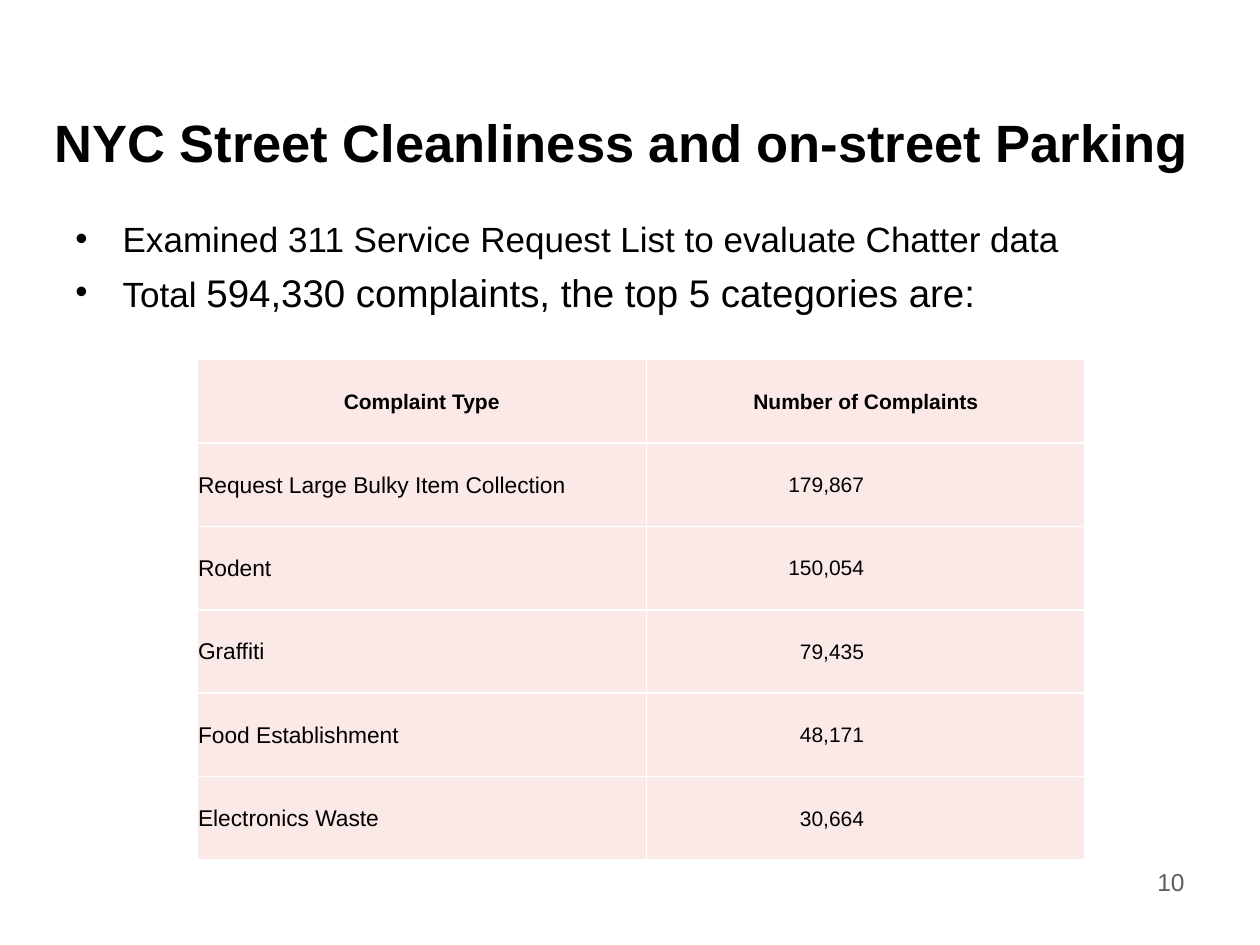
"""Build the street cleanliness slide with its complaints table."""
from lxml.etree import SubElement
from pptx import Presentation
from pptx.dml.color import RGBColor
from pptx.enum.text import MSO_ANCHOR, PP_ALIGN
from pptx.oxml.ns import qn
from pptx.util import Pt

COLORS = {"text": "000000", "page": "5F5F5F", "cell": "FBE9E8", "line": "FFFFFF"}
TITLE = "NYC Street Cleanliness and on-street Parking"
POINTS = [
    [("Examined 311 Service Request List to evaluate Chatter data", 20)],
    [("Total ", 20), ("594,330 complaints, the top 5 categories are:", 22)],
]
HEAD = ("Complaint Type", "Number of Complaints")
ROWS = [
    ("Request Large Bulky Item Collection", "179,867"),
    ("Rodent", "150,054"),
    ("Graffiti", "79,435"),
    ("Food Establishment", "48,171"),
    ("Electronics Waste", "30,664"),
]
PAGE = "10"
WIDTHS = (257, 250.6)
ROW_H = 47.7
SIZES = (13, 12)
ALIGNS = (PP_ALIGN.LEFT, PP_ALIGN.RIGHT)
INSETS = (0.7, 126.3)


def color(name):
    return RGBColor.from_string(COLORS[name])


def write(para, text, size=12, bold=False, tone="text", align=PP_ALIGN.LEFT):
    para.alignment = align
    run = para.add_run()
    run.text = text
    font = run.font
    font.name, font.size, font.bold = "Arial", Pt(size), bold
    font.color.rgb = color(tone)


def add_box(slide, *place, anchor=MSO_ANCHOR.TOP):
    frame = slide.shapes.add_textbox(*map(Pt, place)).text_frame
    frame.word_wrap = True
    frame.vertical_anchor = anchor
    return frame


def add_bullet(para):
    props = para._p.get_or_add_pPr()
    props.set("marL", str(Pt(27)))
    props.set("indent", str(-Pt(27)))
    SubElement(props, qn("a:buFont"), typeface="Arial")
    SubElement(props, qn("a:buChar"), char="•")


def style_cell(cell, right=0.7):
    cell.vertical_anchor = MSO_ANCHOR.MIDDLE
    cell.margin_left = cell.margin_top = Pt(0.7)
    cell.margin_right, cell.margin_bottom = Pt(right), Pt(0)
    props = cell._tc.get_or_add_tcPr()
    for side in ("lnL", "lnR", "lnT", "lnB"):
        line = SubElement(props, qn(f"a:{side}"), w=str(Pt(1)))
        fill = SubElement(line, qn("a:solidFill"))
        SubElement(fill, qn("a:srgbClr"), val=COLORS["line"])
    cell.fill.solid()
    cell.fill.fore_color.rgb = color("cell")


def add_grid(slide):
    count = len(ROWS) + 1
    place = map(Pt, (112.5, 205.4, sum(WIDTHS), ROW_H * count))
    table = slide.shapes.add_table(count, len(HEAD), *place).table
    table.first_row = table.horz_banding = False
    for col, width in zip(table.columns, WIDTHS):
        col.width = Pt(width)
    for row in table.rows:
        row.height = Pt(ROW_H)
    for col, text in enumerate(HEAD):
        cell = table.cell(0, col)
        style_cell(cell)
        write(cell.text_frame.paragraphs[0], text, bold=True, align=PP_ALIGN.CENTER)
    for row, texts in enumerate(ROWS, 1):
        for col, text in enumerate(texts):
            cell = table.cell(row, col)
            style_cell(cell, INSETS[col])
            write(cell.text_frame.paragraphs[0], text, size=SIZES[col], align=ALIGNS[col])


def main():
    deck = Presentation()
    deck.slide_width, deck.slide_height = Pt(720), Pt(540)
    slide = deck.slides.add_slide(deck.slide_layouts[6])

    title = add_box(slide, 24, 49, 724, 63.4, anchor=MSO_ANCHOR.MIDDLE)
    write(title.paragraphs[0], TITLE, size=30, bold=True)

    body = add_box(slide, 36, 121, 648, 357)
    for num, runs in enumerate(POINTS):
        para = body.add_paragraph() if num else body.paragraphs[0]
        if num:
            para.space_before = Pt(5)
        add_bullet(para)
        for text, size in runs:
            write(para, text, size=size, align=PP_ALIGN.JUSTIFY)

    page = add_box(slide, 516, 492, 168, 37.5)
    write(page.paragraphs[0], PAGE, size=14, tone="page", align=PP_ALIGN.RIGHT)
    add_grid(slide)
    deck.save("out.pptx")


if __name__ == "__main__":
    main()
